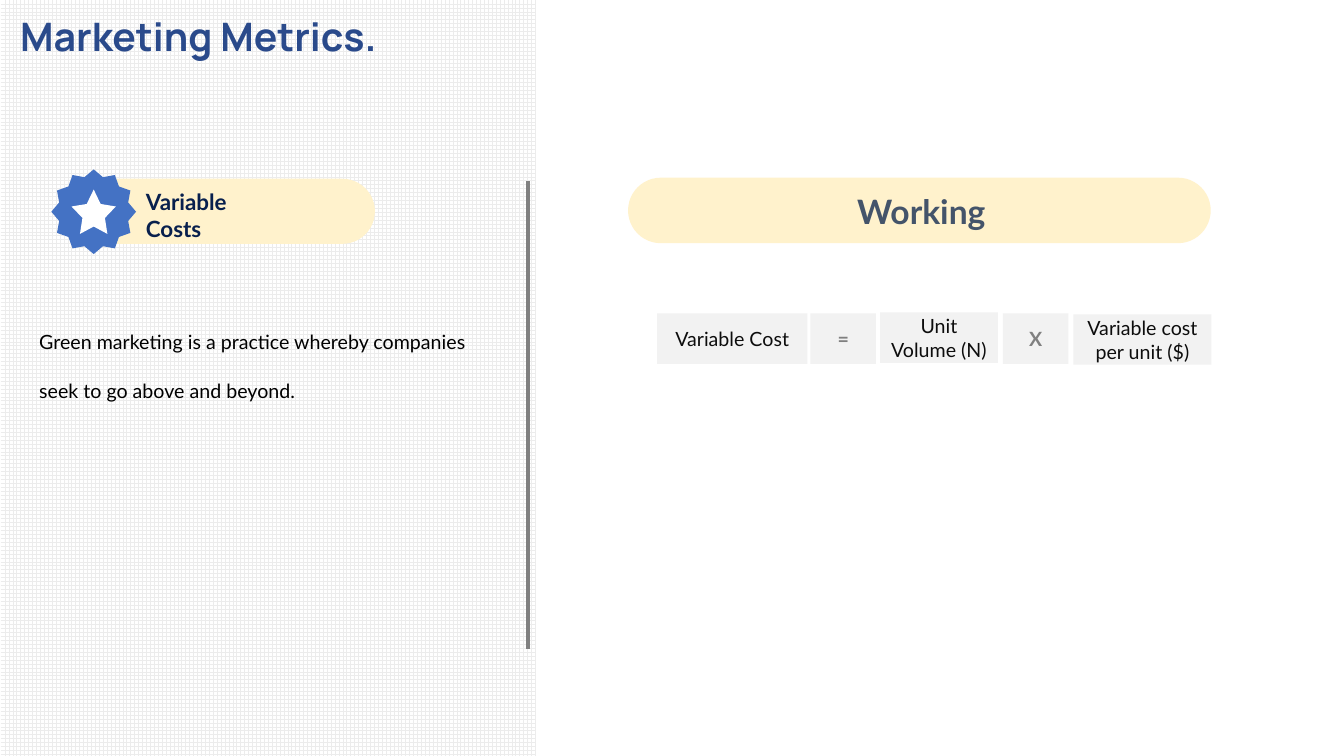
from lxml import etree
from pptx import Presentation
from pptx import util as u
from pptx.dml.color import RGBColor
from pptx.enum import dml, shapes, text
from pptx.oxml.ns import qn

TITLE = "Marketing Metrics."
METRIC = "Variable Costs"
SUMMARY = "Green marketing is a practice whereby companies seek to go above and beyond."
WORKING = "Working"
FORMULA = [
    ("Variable Cost", 469.4, 223.9, 107.3),
    ("=", 578.9, 223.9, 46.8),
    ("Unit Volume (N)", 628.6, 223.2, 84.2),
    ("X", 716.4, 223.9, 46.8),
    ("Variable cost per unit ($)", 766.8, 224.6, 98.6),
]
OPERATORS = ("=", "X")
TERM_HEIGHT = 36

COLORS = {
    "white": "FFFFFF", "grid": "ECECEC", "title": "2A4A8B", "black": "000000",
    "gray": "808080", "cream": "FFF2CC", "badge": "4472C4", "navy": "08204D",
    "slate": "44546A", "term": "F2F2F2", "ink": "0D0D0D",
}
KIND = shapes.MSO_SHAPE
ALIGN = text.PP_ALIGN
ANCHOR = text.MSO_ANCHOR


def color(name):
    return RGBColor.from_string(COLORS[name])


def place(box, left, top, width, height):
    box.left, box.top = u.Pt(left), u.Pt(top)
    box.width, box.height = u.Pt(width), u.Pt(height)


def add_shape(page, kind, area, fill, adjustments=()):
    shape = page.shapes.add_shape(kind, *map(u.Pt, area))
    shape.shadow.inherit = False
    shape.line.fill.background()
    shape.fill.solid()
    shape.fill.fore_color.rgb = color(fill)
    for index, value in enumerate(adjustments):
        shape.adjustments[index] = value
    return shape


def write(box, words, size, ink, font="Lato", bold=False,
          align=ALIGN.LEFT, anchor=ANCHOR.TOP):
    frame = box.text_frame
    frame.word_wrap = True
    frame.auto_size = text.MSO_AUTO_SIZE.NONE
    frame.vertical_anchor = anchor
    para = frame.paragraphs[0]
    para.alignment = align
    span = para.add_run()
    span.text = words
    span.font.name = font
    span.font.size = u.Pt(size)
    span.font.bold = bold
    span.font.color.rgb = color(ink)
    return para


def add_text(page, area, words, size, ink, **style):
    box = page.shapes.add_textbox(*map(u.Pt, area))
    return box, write(box, words, size, ink, **style)


def add_panel(page):
    panel = add_shape(page, KIND.RECTANGLE, (0.7, 0, 382.3, 540), "white")
    panel.fill.patterned()
    panel.fill.pattern = dml.MSO_PATTERN.LARGE_GRID
    panel.fill.fore_color.rgb = color("grid")
    panel.fill.back_color.rgb = color("white")
    page.shapes._spTree.insert(2, panel._element)


def add_divider(page):
    line = page.shapes.add_connector(
        shapes.MSO_CONNECTOR.STRAIGHT, *map(u.Pt, (377.3, 129.6, 377.3, 463.7)))
    line.line.color.rgb = color("gray")
    line.line.width = u.Pt(3)
    etree.SubElement(line._element.spPr, qn("a:effectLst"))


def add_metric(page):
    add_shape(page, KIND.ROUNDED_RECTANGLE, (47.5, 127.7, 220.3, 46.5), "cream", [0.5])
    add_shape(page, KIND.STAR_12_POINT, (36.7, 121, 60.5, 60.5), "badge", [0.422])
    add_shape(page, KIND.STAR_5_POINT, (51.1, 135.4, 31.7, 31.7), "white",
              [0.254, 1.051, 1.106])
    label, _ = add_text(page, (97.2, 140.4, 112.3, 26.6), METRIC, 16, "navy",
                        bold=True, anchor=ANCHOR.MIDDLE)
    label.text_frame.margin_right = u.Pt(18)


def add_working(page):
    add_shape(page, KIND.ROUNDED_RECTANGLE, (448.6, 126.9, 416.2, 46.8), "cream", [0.5])
    add_text(page, (466.6, 132.5, 383, 36), WORKING, 24, "slate",
             bold=True, align=ALIGN.CENTER, anchor=ANCHOR.BOTTOM)
    for words, left, top, width in FORMULA:
        operator = words in OPERATORS
        term = add_shape(page, KIND.RECTANGLE, (left, top, width, TERM_HEIGHT), "term")
        write(term, words, 14, "gray" if operator else "ink", bold=operator,
              align=ALIGN.CENTER, anchor=ANCHOR.MIDDLE)


def main():
    deck = Presentation()
    deck.slide_width, deck.slide_height = u.Pt(960), u.Pt(540)
    page = deck.slides.add_slide(deck.slide_layouts[5])
    add_panel(page)
    title = page.shapes.title
    place(title, 7.2, 5, 303.8, 41)
    write(title, TITLE, 28, "title", font="Manrope", bold=True)
    _, summary = add_text(page, (20.9, 213.8, 334.8, 72), SUMMARY, 14, "black")
    summary.line_spacing = u.Pt(35)
    add_divider(page)
    add_metric(page)
    add_working(page)
    deck.save("out.pptx")


if __name__ == "__main__":
    main()
